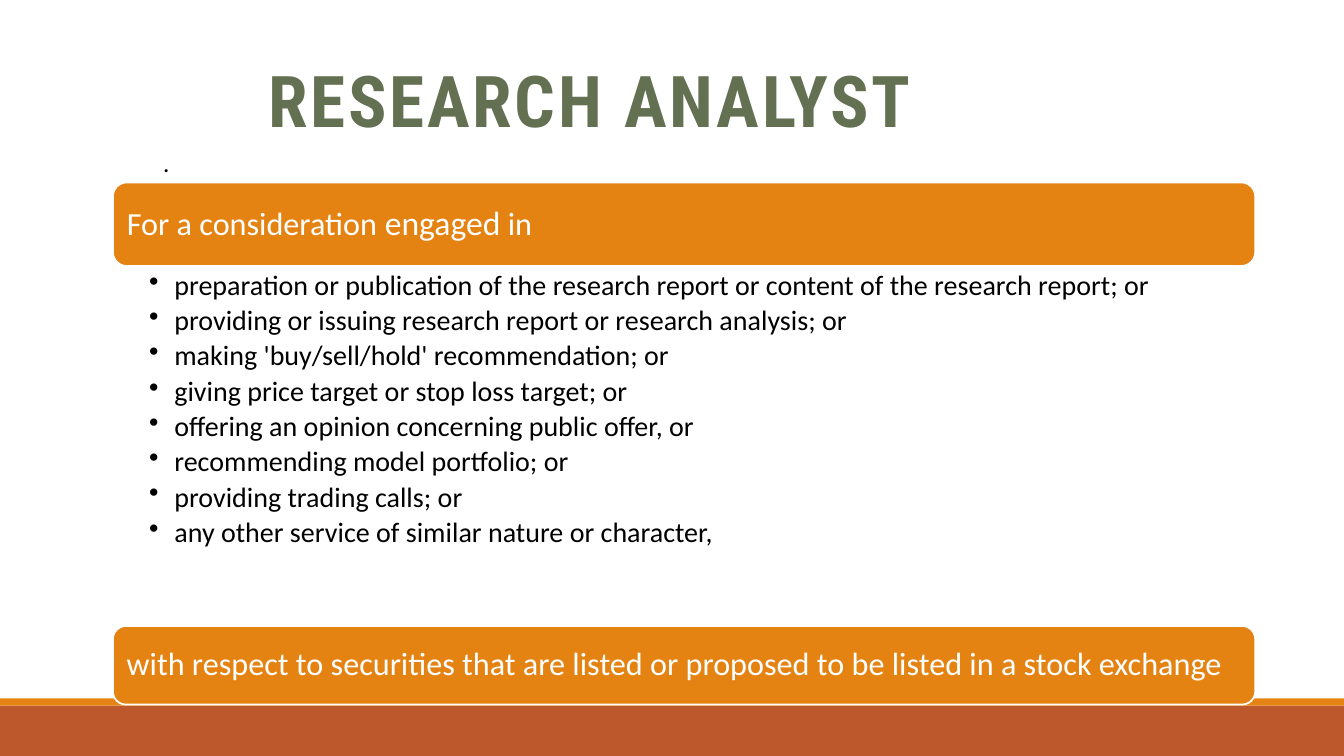
"""Build the Research Analyst definition slide."""
import pptx
import pptx.dml.color
import pptx.enum.shapes
import pptx.enum.text
import pptx.oxml.ns
import pptx.util
from lxml import etree

Inches, Pt = pptx.util.Inches, pptx.util.Pt
RGBColor = pptx.dml.color.RGBColor
SHAPE = pptx.enum.shapes.MSO_SHAPE
ANCHOR = pptx.enum.text.MSO_ANCHOR
ALIGN = pptx.enum.text.PP_ALIGN

ORANGE = RGBColor(0xE4, 0x83, 0x12)
RUST = RGBColor(0xBD, 0x58, 0x2C)
GREEN = RGBColor(0x63, 0x70, 0x52)
WHITE = RGBColor(0xFF, 0xFF, 0xFF)
BLACK = RGBColor(0, 0, 0)

WIDTH, HEIGHT = 13.33, 7.5
LEFT, BAR_WIDTH = 1.12, 11.33
TITLE = "RESEARCH ANALYST"
FOOTER_BANDS = [(7, 0.5, RUST), (6.93, 0.07, ORANGE)]
BARS = [
    (1.81, 0.83, [("For a consideration ", 23), ("engaged", 24), (" in", 23)]),
    (6.21, 0.78, [("with respect to securities that are listed or proposed "
                   "to be listed in a stock exchange", 23)]),
]
ACTIVITIES = [
    "preparation or publication of the research report or content of the research report; or",
    "providing or issuing research report or research analysis; or",
    "making 'buy/sell/hold' recommendation; or",
    "giving price target or stop loss target; or",
    "offering an opinion concerning public offer, or",
    "recommending model portfolio; or",
    "providing trading calls; or",
    "any other service of similar nature or character,",
]


def add_box(slide, shape, box, fill):
    sp = slide.shapes.add_shape(shape, *map(Inches, box))
    sp.shadow.inherit = False
    sp.fill.solid()
    sp.fill.fore_color.rgb = fill
    sp.line.fill.background()
    return sp


def set_frame(tf, anchor, insets):
    tf.word_wrap = True
    tf.vertical_anchor = anchor
    tf.margin_left, tf.margin_top, tf.margin_right, tf.margin_bottom = map(Inches, insets)


def add_text(slide, box, insets=(0.1, 0.05, 0.1, 0.05), anchor=ANCHOR.TOP):
    tf = slide.shapes.add_textbox(*map(Inches, box)).text_frame
    set_frame(tf, anchor, insets)
    return tf


def style_run(r, size, color, font="Calibri"):
    r.font.size = Pt(size)
    r.font.name = font
    r.font.color.rgb = color


def add_bar(slide, top, height, runs):
    sp = add_box(slide, SHAPE.ROUNDED_RECTANGLE, (LEFT, top, BAR_WIDTH, height), ORANGE)
    sp.line.color.rgb = WHITE
    sp.line.width = Pt(1.25)
    set_frame(sp.text_frame, ANCHOR.MIDDLE, (0.1,) * 4)
    p = sp.text_frame.paragraphs[0]
    p.alignment = ALIGN.LEFT
    p.line_spacing = 0.9
    for text, size in runs:
        r = p.add_run()
        r.text = text
        style_run(r, size, WHITE)


def add_bullets(slide, items):
    tf = add_text(slide, (LEFT, 2.66, BAR_WIDTH, 3.55), (0.36, 0.03, 0.16, 0.03))
    tf.text = "\n".join(items)
    for p in tf.paragraphs:
        p.line_spacing = 0.9
        p.space_after = Pt(3.6)
        style_run(p.runs[0], 20, BLACK)
        pPr = p._p.get_or_add_pPr()
        pPr.set("marL", str(Inches(0.25)))
        pPr.set("indent", str(-Inches(0.25)))
        etree.SubElement(pPr, pptx.oxml.ns.qn("a:buChar")).set("char", "•")


def main():
    prs = pptx.Presentation()
    prs.slide_width, prs.slide_height = Inches(WIDTH), Inches(HEIGHT)
    slide = prs.slides.add_slide(prs.slide_layouts[6])

    for top, height, color in FOOTER_BANDS:
        add_box(slide, SHAPE.RECTANGLE, (0, top, WIDTH, height), color)

    tf = add_text(slide, (-0.09, 0.5, 11.88, 0.96), anchor=ANCHOR.BOTTOM)
    tf.text = TITLE
    p = tf.paragraphs[0]
    p.alignment = ALIGN.CENTER
    p.line_spacing = 0.85
    r = p.runs[0]
    style_run(r, 51, GREEN, "Roboto Condensed")
    r.font.bold = True
    r._r.get_or_add_rPr().set("spc", "200")

    tf = add_text(slide, (1.52, 1.41, 11.07, 0.4))
    tf.text = "."
    style_run(tf.paragraphs[0].runs[0], 18, BLACK)

    for top, height, runs in BARS:
        add_bar(slide, top, height, runs)
    add_bullets(slide, ACTIVITIES)
    prs.save("out.pptx")


if __name__ == "__main__":
    main()
